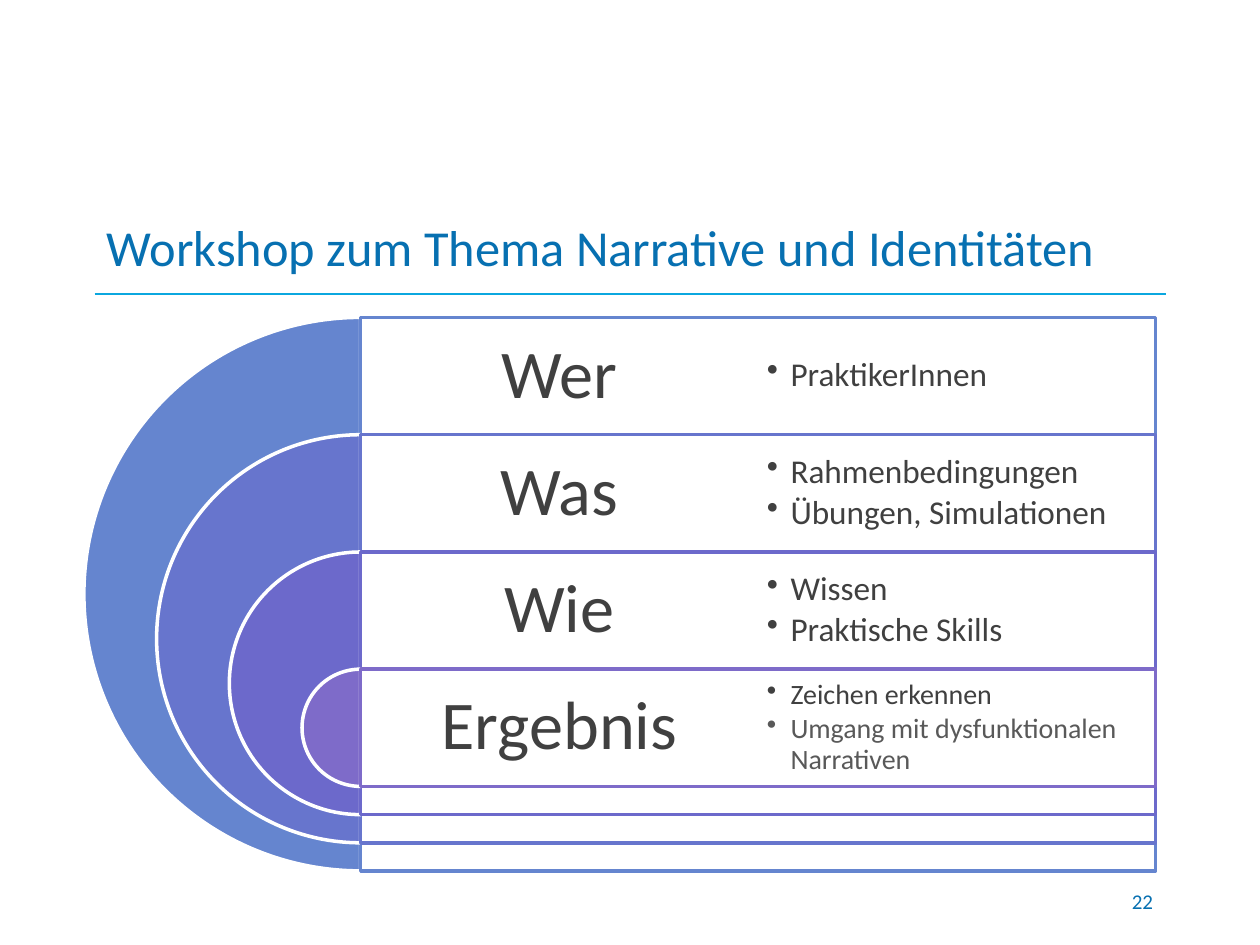
from lxml.etree import SubElement
from pptx import Presentation
from pptx.dml.color import RGBColor
from pptx.enum.shapes import MSO_CONNECTOR, MSO_SHAPE
from pptx.enum.text import MSO_ANCHOR, PP_ALIGN
from pptx.oxml.ns import qn
from pptx.util import Pt

WHITE = RGBColor(0xFF, 0xFF, 0xFF)
DARK = RGBColor(0x40, 0x40, 0x40)
GREY = RGBColor(0x59, 0x59, 0x59)
BLUE = RGBColor(0x07, 0x70, 0xB1)
CYAN = RGBColor(0x0B, 0xA7, 0xDF)

TITLE = "Workshop zum Thema Narrative und Identitäten"
PAGE_NUMBER = "22"
# heading, colour, bullet size, bullets with their colours
LAYERS = [
    ("Wer", RGBColor(0x65, 0x85, 0xCF), 19, [("PraktikerInnen", DARK)]),
    ("Was", RGBColor(0x67, 0x75, 0xCD), 19,
     [("Rahmenbedingungen", DARK), ("Übungen, Simulationen", DARK)]),
    ("Wie", RGBColor(0x6C, 0x69, 0xCB), 19,
     [("Wissen", DARK), ("Praktische Skills", DARK)]),
    ("Ergebnis", RGBColor(0x7E, 0x6B, 0xC9), 16,
     [("Zeichen erkennen", DARK),
      ("Umgang mit dysfunktionalen Narrativen", GREY)]),
]

CENTRE_X = 206.1
TOP = 181.4
ROW_HEIGHT = 67
LAYER_STEP = 83.1
PANEL_WIDTH = 454.3
COLUMN_WIDTH = PANEL_WIDTH / 2
BULLET_INDENT = 13.5


def add_layer_shape(slide, kind, box, fill, line, alpha=None):
    shape = slide.shapes.add_shape(kind, *map(Pt, box))
    shape.shadow.inherit = False
    shape.fill.solid()
    shape.fill.fore_color.rgb = fill
    shape.line.color.rgb = line
    shape.line.width = Pt(2)
    if alpha:
        colour = shape.fill._xPr.find(qn("a:solidFill"))[0]
        SubElement(colour, qn("a:alpha"), val=str(alpha * 1000))
    return shape


def add_bullet(paragraph):
    properties = paragraph._p.get_or_add_pPr()
    properties.set("marL", str(Pt(BULLET_INDENT)))
    properties.set("indent", str(-Pt(BULLET_INDENT)))
    SubElement(properties, qn("a:buChar"), char="•")


def add_text(slide, box, lines, size, inset=None, bullets=False, **formats):
    """Add a middle-anchored text box; lines are (text, colour) pairs."""
    frame = slide.shapes.add_textbox(*map(Pt, box)).text_frame
    frame.word_wrap = True
    frame.vertical_anchor = MSO_ANCHOR.MIDDLE
    if inset is not None:
        for side in ("left", "top", "right", "bottom"):
            setattr(frame, f"margin_{side}", Pt(inset))
    for index, (text, colour) in enumerate(lines):
        paragraph = frame.add_paragraph() if index else frame.paragraphs[0]
        for name, value in formats.items():
            setattr(paragraph, name, value)
        if bullets:
            add_bullet(paragraph)
        run = paragraph.add_run()
        run.text = text
        run.font.name = "Calibri"
        run.font.size = Pt(size)
        run.font.color.rgb = colour


def add_layer(slide, index, heading, colour):
    size = ROW_HEIGHT + (len(LAYERS) - 1 - index) * LAYER_STEP
    top = TOP + index * ROW_HEIGHT
    half_disc = add_layer_shape(
        slide, MSO_SHAPE.PIE, (CENTRE_X - size / 2, top, size, size),
        colour, WHITE)
    # angles in units of 100000/60000 degrees: 90 to 270 degrees
    half_disc.adjustments[0] = 54
    half_disc.adjustments[1] = 162
    add_layer_shape(slide, MSO_SHAPE.RECTANGLE,
                    (CENTRE_X, top, PANEL_WIDTH, size), WHITE, colour, 90)
    add_text(slide, (CENTRE_X, top, COLUMN_WIDTH, ROW_HEIGHT),
             [(heading, DARK)], 39, inset=11.5,
             alignment=PP_ALIGN.CENTER, line_spacing=0.9)


def main():
    presentation = Presentation()
    presentation.slide_width, presentation.slide_height = Pt(720), Pt(540)
    slide = presentation.slides.add_slide(presentation.slide_layouts[6])

    rule = slide.shapes.add_connector(
        MSO_CONNECTOR.STRAIGHT, Pt(54), Pt(168), Pt(666), Pt(168))
    rule.line.color.rgb = CYAN
    rule.line.width = Pt(0.75)
    SubElement(rule._element.spPr, qn("a:effectLst"))

    for index, (heading, colour, _, _) in enumerate(LAYERS):
        add_layer(slide, index, heading, colour)
    for index, (_, _, size, bullets) in enumerate(LAYERS):
        box = (CENTRE_X + COLUMN_WIDTH, TOP + index * ROW_HEIGHT,
               COLUMN_WIDTH, ROW_HEIGHT)
        add_text(slide, box, bullets, size, inset=5, bullets=True,
                 line_spacing=0.9, space_after=Pt(size * 0.15))

    add_text(slide, (54, 114, 612, 54), [(TITLE, BLUE)], 28.8)
    add_text(slide, (516, 500.5, 150, 29), [(PAGE_NUMBER, BLUE)], 12,
             alignment=PP_ALIGN.RIGHT)
    presentation.save("out.pptx")


if __name__ == "__main__":
    main()
